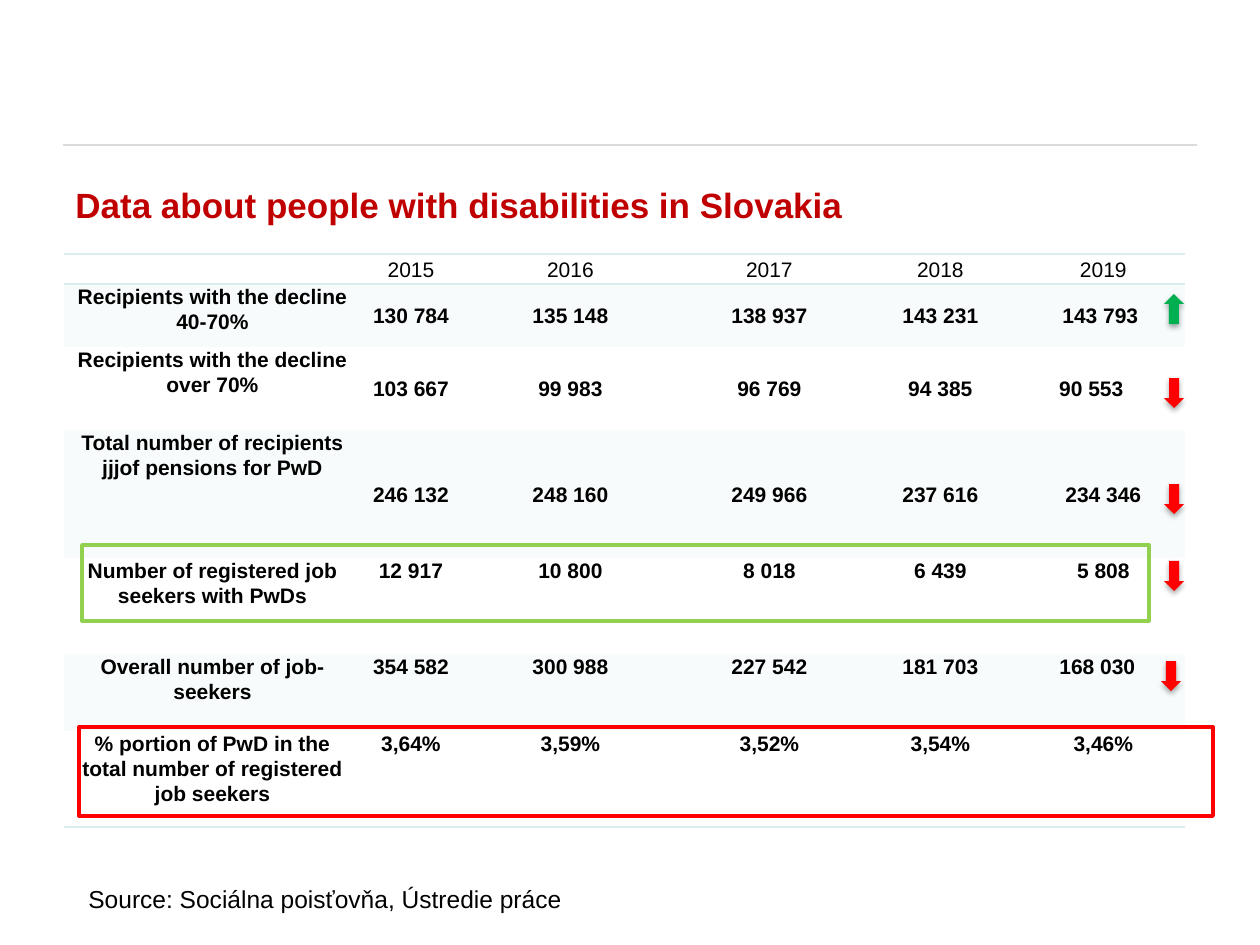
from lxml import etree
from pptx import Presentation
from pptx import util as u
from pptx.dml.color import RGBColor
from pptx.enum import shapes, text
from pptx.oxml import parse_xml
from pptx.oxml.ns import nsdecls, qn

PX = 914400 / 126
COLORS = {
    "black": "000000", "title": "C00000", "band": "DAEDEF",
    "rise": "00B050", "fall": "FF0000",
    "jobseekers": "92D050", "portion": "FF0000",
}
FONT = "Arial"
COLUMN_WIDTHS = [297, 100, 219, 179, 163, 163]
ROW_HEIGHTS = [30, 63, 83, 128, 96, 77, 96]
ROWS = [
    ["", "2015", "2016", "2017", "2018", "2019"],
    ["Recipients with the decline 40-70%",
     "130 784", "135 148", "138 937", "143 231", "143 793"],
    ["Recipients with the decline over 70%",
     "103 667", "99 983", "96 769", "94 385", "90 553"],
    ["Total number of recipients jjjof pensions for PwD",
     "246 132", "248 160", "249 966", "237 616", "234 346"],
    ["Number of registered job seekers with PwDs",
     "12 917", "10 800", "8 018", "6 439", "5 808"],
    ["Overall number of job-seekers",
     "354 582", "300 988", "227 542", "181 703", "168 030"],
    ["% portion of PwD in the total number of registered job seekers",
     "3,64%", "3,59%", "3,52%", "3,54%", "3,46%"],
]
MIDDLE_ROWS = range(4)
BANDED_ROWS = (1, 3, 5)
CELL_MARGIN = 9
# Extra right margin that moves a 2019 value to the left, by row
LAST_COLUMN_SHIFT = {1: 6, 2: 24, 5: 12}
PLAIN_TABLE_STYLE = "{2D5ABB26-0587-4C30-8999-92F81FD0307C}"


def px(length):
    return u.Emu(round(length * PX))


def box_px(box):
    return [px(length) for length in box]


def color(name):
    return RGBColor.from_string(COLORS[name])


def set_font(paragraph, size, name="black", bold=False):
    font = paragraph.font
    font.name, font.size, font.bold = FONT, u.Pt(size), bold
    font.color.rgb = color(name)


def set_alpha(properties, percent):
    """Make the first solid colour under the given element translucent."""
    srgb = next(properties.iter(qn("a:srgbClr")))
    etree.SubElement(srgb, qn("a:alpha")).set("val", str(percent * 1000))


def add_text(slide, box, words, size, name="black", bold=False, top=6):
    frame = slide.shapes.add_textbox(*box_px(box)).text_frame
    frame.word_wrap = True
    frame.margin_top = px(top)
    paragraph = frame.paragraphs[0]
    paragraph.text = words
    set_font(paragraph, size, name, bold)


def add_rule(slide, left, top, width):
    rule = slide.shapes.add_connector(
        shapes.MSO_CONNECTOR.STRAIGHT, *box_px((left, top, left + width, top)))
    rule.line.width = u.Pt(0.5)
    rule.line.color.rgb = color("black")
    properties = rule.element.spPr
    set_alpha(properties, 40)
    etree.SubElement(properties, qn("a:effectLst"))


def add_border(cell, side):
    border = parse_xml(
        f'<a:{side} {nsdecls("a")} w="12700"><a:solidFill>'
        f'<a:srgbClr val="{COLORS["band"]}"/></a:solidFill></a:{side}>')
    cell._tc.get_or_add_tcPr().insert(0, border)


def fill_cell(cell, words, row, column):
    cell.margin_top = cell.margin_bottom = 0
    cell.margin_left = px(CELL_MARGIN)
    shift = LAST_COLUMN_SHIFT.get(row, 0) if column == len(COLUMN_WIDTHS) - 1 else 0
    cell.margin_right = px(CELL_MARGIN + shift)
    middle = row in MIDDLE_ROWS and (column > 0 or row == 0)
    cell.vertical_anchor = text.MSO_ANCHOR.MIDDLE if middle else text.MSO_ANCHOR.TOP

    paragraph = cell.text_frame.paragraphs[0]
    paragraph.text = words
    paragraph.alignment = text.PP_ALIGN.CENTER
    paragraph.line_spacing = 1.07
    set_font(paragraph, 12, bold=row > 0)

    if row in BANDED_ROWS:
        cell.fill.solid()
        cell.fill.fore_color.rgb = color("band")
        set_alpha(cell._tc.tcPr, 20)
    else:
        cell.fill.background()
    if row in (0, len(ROWS) - 1):
        add_border(cell, "lnB")
    if row == 0:
        add_border(cell, "lnT")


def add_data_table(slide, left, top):
    box = (left, top, sum(COLUMN_WIDTHS), sum(ROW_HEIGHTS))
    table = slide.shapes.add_table(
        len(ROWS), len(COLUMN_WIDTHS), *box_px(box)).table
    table.first_row = table.horz_banding = False
    table._tbl.tblPr.find(qn("a:tableStyleId")).text = PLAIN_TABLE_STYLE
    for column, width in zip(table.columns, COLUMN_WIDTHS):
        column.width = px(width)
    for row, height in zip(table.rows, ROW_HEIGHTS):
        row.height = px(height)
    for r, values in enumerate(ROWS):
        for c, words in enumerate(values):
            fill_cell(table.cell(r, c), words, r, c)


def add_trend_arrow(slide, left, top, trend):
    arrow = slide.shapes.add_shape(
        shapes.MSO_SHAPE.UP_ARROW, *box_px((left, top, 20, 30)))
    arrow.rotation = 180 if trend == "fall" else 0
    arrow.fill.solid()
    arrow.fill.fore_color.rgb = color(trend)
    arrow.line.fill.background()
    arrow.element.spPr.append(parse_xml(
        f'<a:effectLst {nsdecls("a")}><a:outerShdw blurRad="40000" dist="23000" '
        f'dir="5400000" rotWithShape="0"><a:srgbClr val="{COLORS["black"]}">'
        '<a:alpha val="35000"/></a:srgbClr></a:outerShdw></a:effectLst>'))


def add_highlight(slide, box, name, weight):
    frame = slide.shapes.add_shape(shapes.MSO_SHAPE.RECTANGLE, *box_px(box))
    frame.shadow.inherit = False
    frame.fill.background()
    frame.line.color.rgb = color(name)
    frame.line.width = u.Pt(weight)


def main():
    deck = Presentation()
    deck.slide_width, deck.slide_height = px(1260), px(945)
    slide = deck.slides.add_slide(deck.slide_layouts[6])

    add_rule(slide, 63, 145, 1134)
    add_text(slide, (63, 175, 1134, 745),
             "Data about people with disabilities in Slovakia",
             20, "title", bold=True, top=9)
    add_data_table(slide, 64, 254)
    add_text(slide, (76, 878, 990, 43),
             "Source: Sociálna poisťovňa, Ústredie práce", 14)
    for left, top, trend in [(1164, 294, "rise"), (1164, 378, "fall"),
                             (1164, 484, "fall"), (1164, 561, "fall"),
                             (1161, 661, "fall")]:
        add_trend_arrow(slide, left, top, trend)
    add_highlight(slide, (79, 727, 1134, 89), "portion", 2.25)
    add_highlight(slide, (82, 545, 1067, 76), "jobseekers", 2)

    deck.save("out.pptx")


if __name__ == "__main__":
    main()
